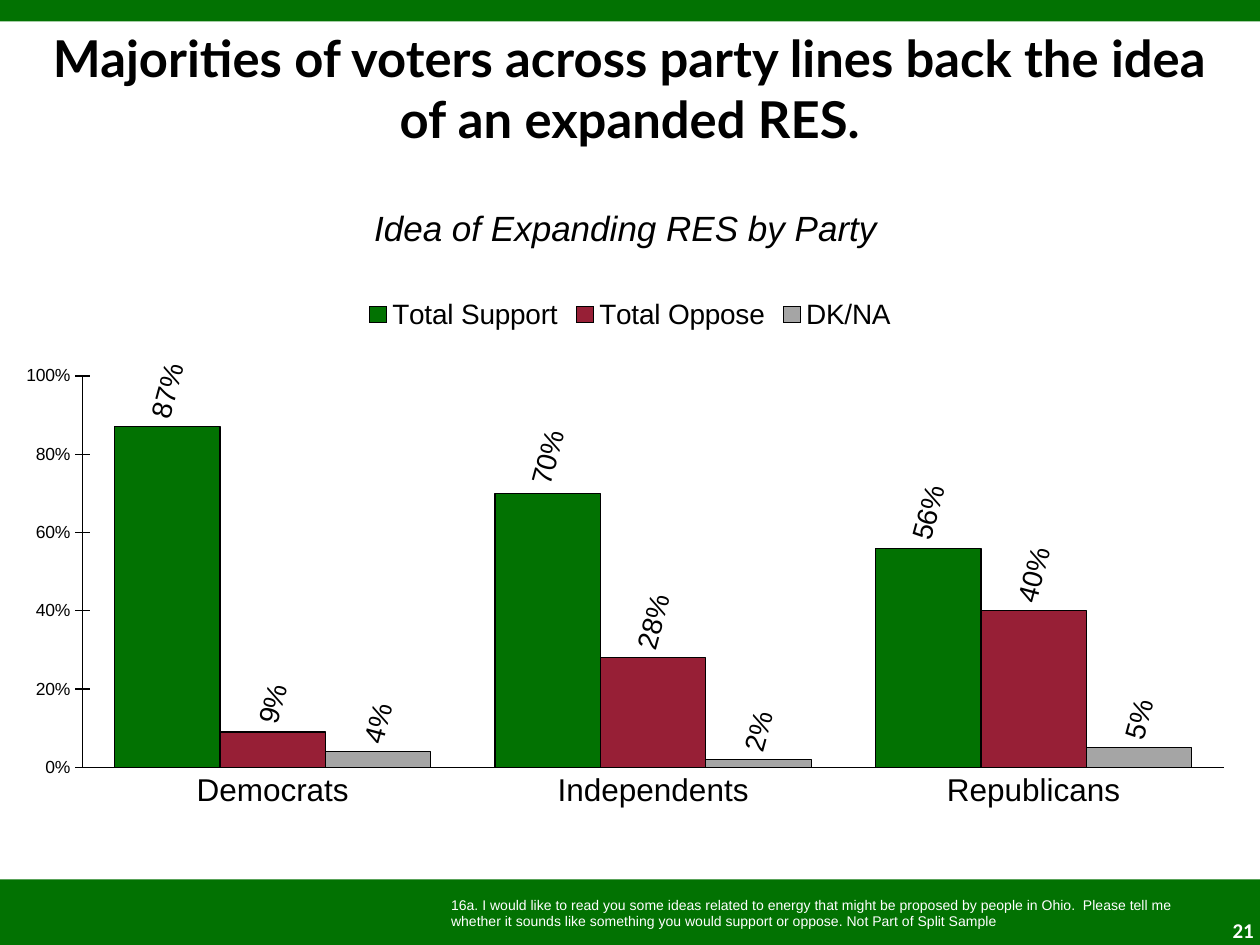
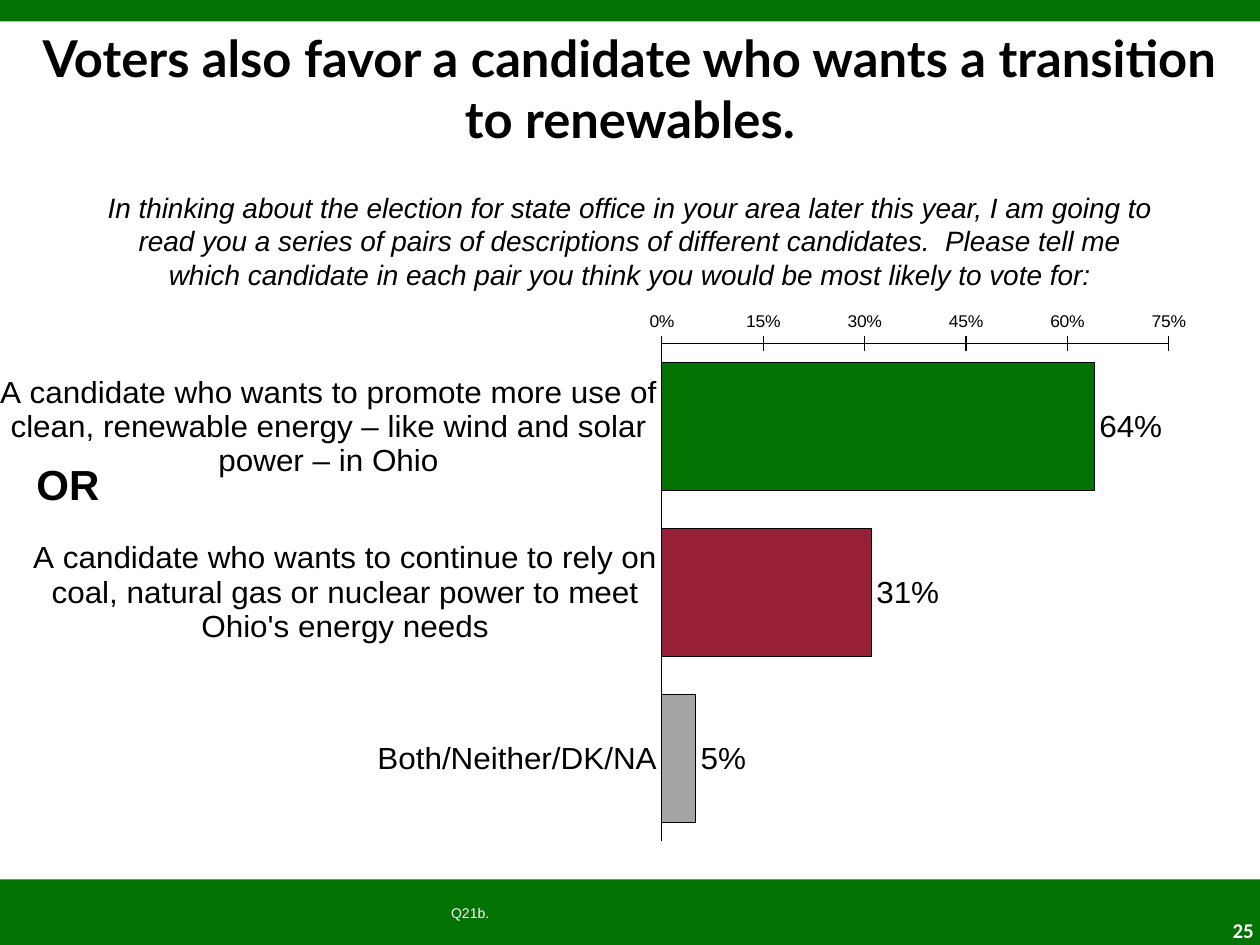
from lxml import etree
from pptx import Presentation
from pptx import util as u
from pptx.chart.data import CategoryChartData
from pptx.dml.color import RGBColor
from pptx.enum import chart as ch, shapes, text
from pptx.oxml import ns

# Shared look: a grid of 100 columns by 75 rows, and the colours
COLS, ROWS = 100, 75
CELL = u.Inches(0.1)
GREEN, RED, GRAY = "027202", "971F36", "A5A5A5"
BLACK, WHITE = "000000", "FFFFFF"
FOOT = 69.8
LEFT, MID, RIGHT = text.PP_ALIGN.LEFT, text.PP_ALIGN.CENTER, text.PP_ALIGN.RIGHT
TOP, CENTRE = text.MSO_ANCHOR.TOP, text.MSO_ANCHOR.MIDDLE


def rgb(code):
    return RGBColor.from_string(code)


def grid(*cells):
    return [round(c * CELL) for c in cells]


def place(shape, *cells):
    shape.left, shape.top, shape.width, shape.height = grid(*cells)


def write(shape, words, size=18, font="Arial", color=BLACK, bold=False,
          italic=False, align=LEFT, anchor=TOP):
    frame = shape.text_frame
    frame.text = words
    frame.word_wrap = True
    frame.auto_size = text.MSO_AUTO_SIZE.NONE
    frame.vertical_anchor = anchor
    para = frame.paragraphs[0]
    para.alignment = align
    para.space_before = u.Pt(0)
    # No bullet and no indent
    props = para._p.get_or_add_pPr()
    props.set("marL", "0")
    props.set("indent", "0")
    etree.SubElement(props, ns.qn("a:buNone"))
    face = para.runs[0].font
    face.size, face.name = u.Pt(size), font
    face.bold, face.italic = bold, italic
    face.color.rgb = rgb(color)


def label(slide, cells, words, **fmt):
    write(slide.shapes.add_textbox(*grid(*cells)), words, **fmt)


def bands(slide):
    """Put the green bands on the layout, so that every slide has them."""
    tree = slide.slide_layout.shapes.element
    for num, (top, high) in enumerate([(0, 1.7), (FOOT, ROWS - FOOT)]):
        band = slide.shapes.add_shape(
            shapes.MSO_SHAPE.RECTANGLE, *grid(0, top, COLS, high))
        band.shadow.inherit = False
        band.fill.solid()
        band.fill.fore_color.rgb = rgb(GREEN)
        band.line.fill.background()
        band.element.nvSpPr.cNvPr.set("id", str(90 + num))
        tree.append(band.element)


def page(deck, title, note, num):
    slide = deck.slides.add_slide(deck.slide_layouts[1])
    head, foot = slide.placeholders
    place(head, 1.9, 1.6, 96.2, 12.5)
    write(head, title, size=29, font="Lato", bold=True, align=MID)
    place(foot, 34.8, 69.9, 62.6, 5.1)
    write(foot, note, size=8, color=WHITE, anchor=CENTRE)
    label(slide, (93.8, 72.3, 6.7, 3), num, size=12, font="Calibri",
          color=WHITE, bold=True, align=RIGHT)
    return slide


def edge(line):
    line.color.rgb = rgb(BLACK)
    line.width = u.Pt(0.75)


def paint(part, color):
    part.format.fill.solid()
    part.format.fill.fore_color.rgb = rgb(color)
    edge(part.format.line)


def frame_plot(chart, *shares):
    """Fix the inner plot area as shares of the chart's size."""
    area = chart.element.chart.plotArea
    for old in area.findall(ns.qn("c:layout")):
        area.remove(old)
    layout = etree.Element(ns.qn("c:layout"))
    manual = etree.SubElement(layout, ns.qn("c:manualLayout"))
    marks = [("layoutTarget", "inner"), ("xMode", "edge"), ("yMode", "edge")]
    for tag, val in marks + list(zip("xywh", shares)):
        etree.SubElement(manual, ns.qn("c:" + tag)).set("val", str(val))
    area.insert(0, layout)


def bars(slide, kind, cells, cats, rows, gap, top, step, plot, size=18):
    data = CategoryChartData(number_format="0%")
    data.categories = cats
    for name, vals in rows:
        data.add_series(name, vals)
    chart = slide.shapes.add_chart(kind, *grid(*cells), data).chart
    chart.has_title = chart.has_legend = False
    chart.font.name, chart.font.size = "Arial", u.Pt(18)
    chart.font.color.rgb = rgb(BLACK)
    frame_plot(chart, *plot)
    chart.plots[0].gap_width = gap
    chart.plots[0].vary_by_categories = False
    # Axes
    cat, val = chart.category_axis, chart.value_axis
    for axis, tick, pts in ((cat, ch.XL_TICK_MARK.NONE, 18),
                            (val, ch.XL_TICK_MARK.CROSS, 10)):
        axis.has_major_gridlines = False
        axis.major_tick_mark = tick
        axis.minor_tick_mark = ch.XL_TICK_MARK.NONE
        axis.tick_labels.font.size = u.Pt(pts)
        edge(axis.format.line)
    val.minimum_scale, val.maximum_scale, val.major_unit = 0, top, step
    val.tick_labels.number_format = "0%"
    val.tick_labels.number_format_is_linked = False
    # Bars and their values
    for row, color in zip(chart.plots[0].series, (GREEN, RED, GRAY)):
        paint(row, color)
        tags = row.data_labels
        tags.show_value = True
        tags.number_format, tags.number_format_is_linked = "0%", False
        tags.position = ch.XL_LABEL_POSITION.OUTSIDE_END
        tags.font.size = u.Pt(size)
        tags.font.color.rgb = rgb(BLACK)
    return chart


def party(deck):
    slide = page(
        deck, "Majorities of voters across party lines back the idea of an "
        "expanded RES.",
        "16a. I would like to read you some ideas related to energy that might "
        "be proposed by people in Ohio.  Please tell me whether it sounds like "
        "something you would support or oppose. Not Part of Split Sample", "21")
    bands(slide)
    label(slide, (1.9, 15.9, 95.5, 4.4), "Idea of Expanding RES by Party",
          size=20, italic=True, align=MID)
    chart = bars(
        slide, ch.XL_CHART_TYPE.COLUMN_CLUSTERED, (1.5, 22.6, 97, 45.3),
        ["Democrats", "Independents", "Republicans"],
        [("Total Support", (0.87, 0.7, 0.56)),
         ("Total Oppose", (0.09, 0.28, 0.4)),
         ("DK/NA", (0.04, 0.02, 0.05))],
        gap=61, top=1, step=0.2, plot=(0.052, 0.16, 0.934, 0.686), size=16)
    chart.has_legend = True
    chart.legend.position = ch.XL_LEGEND_POSITION.TOP
    chart.legend.include_in_layout = False
    chart.legend.font.size = u.Pt(16)
    # Tilt the values by 75 degrees
    for body in chart.element.xpath(".//c:dLbls/c:txPr/a:bodyPr"):
        body.set("rot", str(-75 * 60000))
        body.set("vert", "horz")


def choice(deck):
    slide = page(
        deck, "Voters also favor a candidate who wants a transition to "
        "renewables.", "Q21b.", "25")
    label(slide, (7.3, 14.6, 85.4, 9.1),
          "In thinking about the election for state office in your area later "
          "this year, I am going to read you a series of pairs of descriptions "
          "of different candidates.  Please tell me which candidate in each "
          "pair you think you would be most likely to vote for:",
          size=16, italic=True, align=MID)
    chart = bars(
        slide, ch.XL_CHART_TYPE.BAR_CLUSTERED, (0, 24.8, 99.3, 44.8),
        ["A candidate who wants to promote more use of clean, renewable energy "
         "– like wind and solar power – in Ohio",
         "A candidate who wants to continue to rely on coal, natural gas or "
         "nuclear power to meet Ohio's energy needs",
         "Both/Neither/DK/NA"],
        [("Series 1", (0.64, 0.31, 0.05))],
        gap=30, top=0.75, step=0.15, plot=(0.528, 0.021, 0.406, 0.914))
    # First answer on top, value axis at the bottom
    chart.category_axis.reverse_order = True
    chart.category_axis.crosses = ch.XL_AXIS_CROSSES.MAXIMUM
    for num, color in ((1, RED), (2, GRAY)):
        paint(chart.plots[0].series[0].points[num], color)
    label(slide, (1.9, 35.9, 9.8, 5), "OR", size=24, bold=True)


def main():
    deck = Presentation()
    deck.slide_width, deck.slide_height = grid(COLS, ROWS)
    party(deck)
    choice(deck)
    deck.save("out.pptx")


if __name__ == "__main__":
    main()
